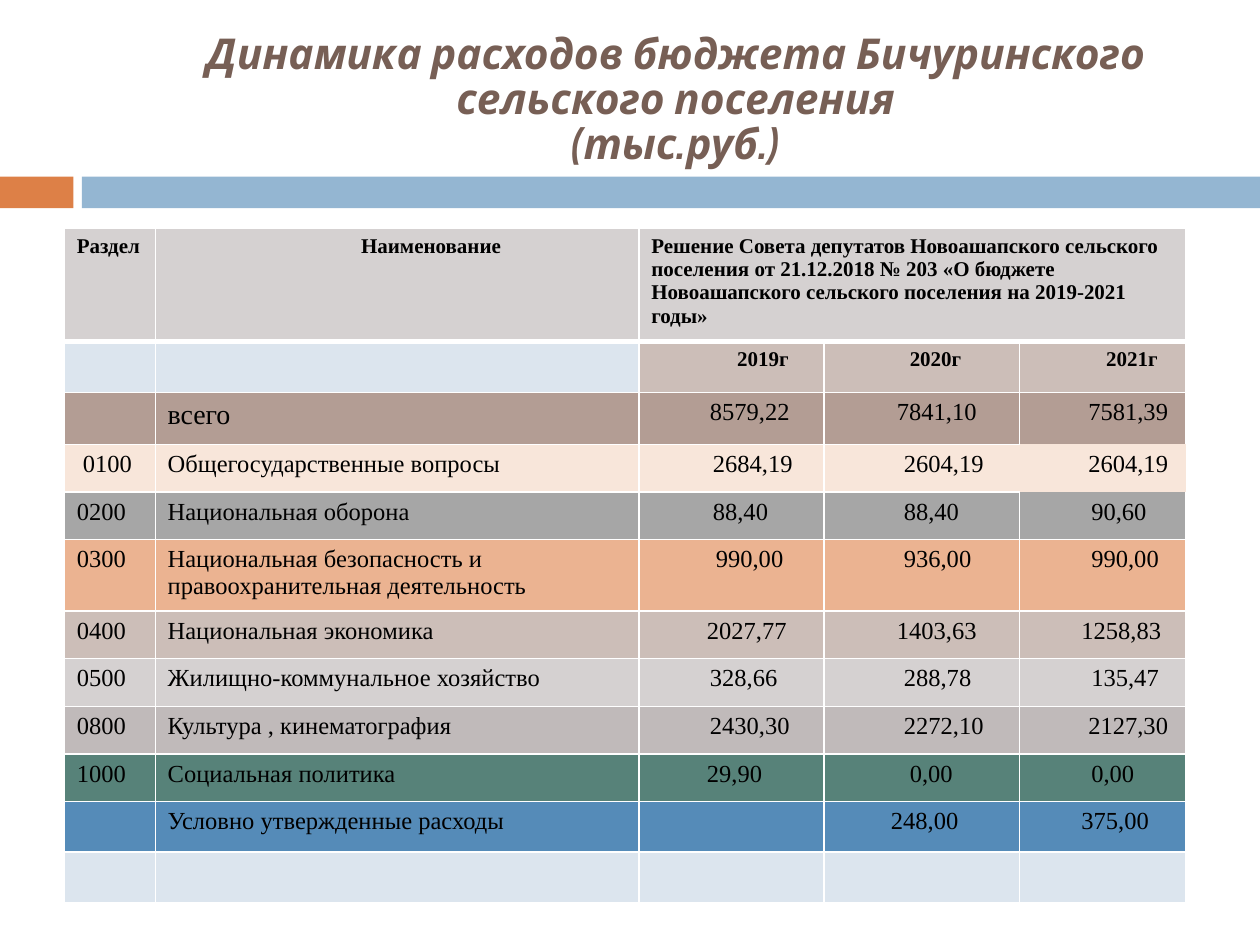
from dataclasses import dataclass

import pptx
import pptx.dml.color
import pptx.enum.shapes
import pptx.enum.text
import pptx.oxml.ns
import pptx.util
from lxml import etree

Cm = pptx.util.Cm
Pt = pptx.util.Pt
RGB = pptx.dml.color.RGBColor.from_string
qn = pptx.oxml.ns.qn


@dataclass
class Theme:
    accent: str = "DD8047"
    band: str = "94B6D2"
    title: str = "775F55"
    text: str = "000000"
    line: str = "FFFFFF"
    header: str = "D5D1D1"
    years: str = "CCBEB8"
    total: str = "B39D94"
    peach: str = "F8E6DA"
    gray: str = "A6A6A6"
    orange: str = "EBB391"
    culture: str = "C0BABA"
    green: str = "578279"
    blue: str = "558BB8"
    pale: str = "DCE5EE"
    title_font: str = "Cabin"
    body_font: str = "Times New Roman"
    title_size: float = 24.3
    header_size: float = 12
    total_size: float = 16
    body_size: float = 14


theme = Theme()


def add_edge(tcPr, side, width):
    ln = etree.SubElement(tcPr, qn(f"a:ln{side}"), w=str(Pt(width)))
    if width:
        fill = etree.SubElement(ln, qn("a:solidFill"))
        etree.SubElement(fill, qn("a:srgbClr"), val=theme.line)
    else:
        etree.SubElement(ln, qn("a:noFill"))


prs = pptx.Presentation()
prs.slide_width = Cm(25.4)
prs.slide_height = Cm(19.05)
s = prs.slides.add_slide(prs.slide_layouts[6])

for left, width, color in [(0, 1.48, theme.accent), (1.65, 23.75, theme.band)]:
    sp = s.shapes.add_shape(pptx.enum.shapes.MSO_SHAPE.RECTANGLE,
                            Cm(left), Cm(3.56), Cm(width), Cm(0.64))
    sp.shadow.inherit = False
    sp.fill.solid()
    sp.fill.fore_color.rgb = RGB(color)
    sp.line.fill.background()

title = s.shapes.add_textbox(Cm(2.74), Cm(0.74), Cm(21.77), Cm(2.59))
tf = title.text_frame
tf.word_wrap = True
tf.vertical_anchor = pptx.enum.text.MSO_ANCHOR.MIDDLE
tf.text = "Динамика расходов бюджета Бичуринского\nсельского поселения\n(тыс.руб.)"
for p in tf.paragraphs:
    p.alignment = pptx.enum.text.PP_ALIGN.CENTER
    p.line_spacing = 0.89
    r = p.runs[0]
    r.font.name = theme.title_font
    r.font.size = Pt(theme.title_size)
    r.font.bold = True
    r.font.italic = True
    r.font.color.rgb = RGB(theme.title)

decree = ("Решение Совета депутатов Новоашапского сельского поселения от 21.12.2018 "
          "№ 203 «О бюджете Новоашапского сельского поселения на 2019-2021 годы»")
inset = 0.25
rows = [
    (theme.header, 2.24, ["Раздел", ("Наименование", 4.15), decree, "", ""]),
    (theme.years, 1.03, ["", "", ("2019г", 1.98), ("2020г", 1.73), ("2021г", 1.75)]),
    (theme.total, 1.04, ["", "всего", ("8579,22", 1.43), ("7841,10", 1.47), ("7581,39", 1.39)]),
    (theme.peach, 0.96, [("0100", 0.37), "Общегосударственные вопросы",
                         ("2684,19", 1.49), ("2604,19", 1.61), ("2604,19", 1.39)]),
    (theme.gray, 0.96, ["0200", "Национальная оборона",
                        ("88,40", 1.49), ("88,40", 1.61), ("90,60", 1.45)]),
    (theme.orange, 1.38, ["0300", "Национальная безопасность и правоохранительная деятельность",
                          ("990,00", 1.55), ("936,00", 1.61), ("990,00", 1.45)]),
    (theme.years, 0.96, ["0400", "Национальная экономика",
                         ("2027,77", 1.37), ("1403,63", 1.47), ("1258,83", 1.25)]),
    (theme.header, 0.96, ["0500", "Жилищно-коммунальное хозяйство",
                          ("328,66", 1.43), ("288,78", 1.61), ("135,47", 1.45)]),
    (theme.culture, 0.96, ["0800", "Культура , кинематография",
                           ("2430,30", 1.43), ("2272,10", 1.61), ("2127,30", 1.39)]),
    (theme.green, 0.96, ["1000", "Социальная политика",
                         ("29,90", 1.37), ("0,00", 1.73), ("0,00", 1.45)]),
    (theme.blue, 0.96, ["", "Условно утвержденные расходы",
                        "", ("248,00", 1.35), ("375,00", 1.25)]),
    (theme.pale, 0.96, [""] * 5),
]
col_widths = [1.83, 9.75, 3.73, 3.94, 3.35]
edge_widths = {(2, 4, "B"): 0, (3, 3, "R"): 0, (4, 4, "T"): 0}
edge_widths.update({(3, 4, side): 0 for side in "LRTB"})
edge_widths.update({(0, col, "B"): 3 for col in range(5)})
edge_widths.update({(1, col, "T"): 3 for col in range(5)})

table = s.shapes.add_table(len(rows), len(col_widths), Cm(1.3), Cm(4.6),
                           Cm(sum(col_widths)), Cm(sum(row[1] for row in rows))).table
for column, width in zip(table.columns, col_widths):
    column.width = Cm(width)
table.cell(0, 2).merge(table.cell(0, 4))

for i, (color, height, values) in enumerate(rows):
    table.rows[i].height = Cm(height)
    for j, value in enumerate(values):
        text, left = value if isinstance(value, tuple) else (value, inset)
        cell = table.cell(i, j)
        cell.margin_left = Cm(left)
        cell.margin_right = Cm(0.1 if j > 2 else inset)
        tcPr = cell._tc.get_or_add_tcPr()
        for side in "LRTB":
            add_edge(tcPr, side, edge_widths.get((i, j, side), 1))
        cell.fill.solid()
        cell.fill.fore_color.rgb = RGB(theme.pale if i == 1 and j < 2 else color)
        p = cell.text_frame.paragraphs[0]
        r = p.add_run()
        r.text = text
        r.font.name = theme.body_font
        r.font.bold = i < 2
        r.font.color.rgb = RGB(theme.text)
        if i < 2:
            r.font.size = Pt(theme.header_size)
        elif (i, j) == (2, 1):
            r.font.size = Pt(theme.total_size)
        else:
            r.font.size = Pt(theme.body_size)

prs.save("out.pptx")
